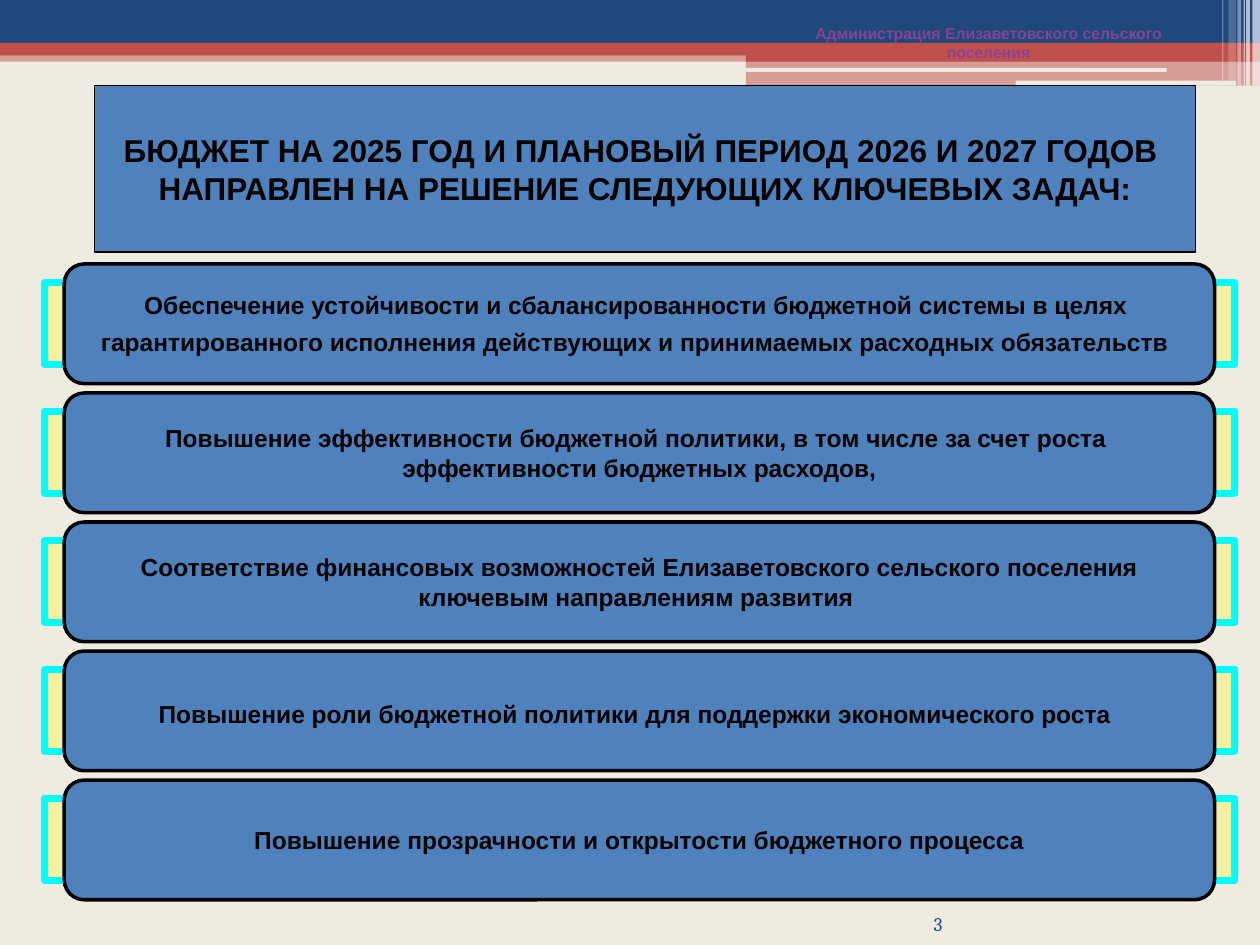
import pptx
import pptx.util
import pptx.dml.color
import pptx.enum.shapes
import pptx.enum.text
import pptx.oxml
import pptx.oxml.ns

SHAPE = pptx.enum.shapes.MSO_SHAPE
ALIGN = pptx.enum.text.PP_ALIGN
ANCHOR = pptx.enum.text.MSO_ANCHOR

NAVY, RED, CREAM, WHITE = "1F497D", "C0504D", "EEECE1", "FFFFFF"
BLUE, CYAN, YELLOW, BLACK, PURPLE = "4F81BD", "00FFFF", "FFFF00", "000000", "874396"


def rgb(value):
    return pptx.dml.color.RGBColor.from_string(value)


class Deck:
    cols, rows = 100, 75
    font = "Arial"

    def __init__(self):
        self.prs = pptx.Presentation()
        self.prs.slide_width = pptx.util.Inches(10)
        self.prs.slide_height = pptx.util.Inches(7.5)
        self.s = self.prs.slides.add_slide(self.prs.slide_layouts[6])

    def background(self, color):
        fill = self.s.background.fill
        fill.solid()
        fill.fore_color.rgb = rgb(color)

    def place(self, x, y, w, h):
        col = self.prs.slide_width / self.cols
        row = self.prs.slide_height / self.rows
        return [round(v) for v in (x * col, y * row, w * col, h * row)]

    def box(self, x, y, w, h, color, opacity=100, line=None, width=1, kind=SHAPE.RECTANGLE):
        sp = self.s.shapes.add_shape(kind, *self.place(x, y, w, h))
        sp.shadow.inherit = False
        sp.fill.solid()
        sp.fill.fore_color.rgb = rgb(color)
        if opacity < 100:
            clr = sp.element.spPr.find(".//" + pptx.oxml.ns.qn("a:srgbClr"))
            alpha = pptx.oxml.parse_xml(f'<a:alpha {pptx.oxml.ns.nsdecls("a")} val="{opacity * 1000}"/>')
            clr.append(alpha)
        if line:
            sp.line.color.rgb = rgb(line)
            sp.line.width = pptx.util.Pt(width)
        else:
            sp.line.fill.background()
        return sp

    def put_text(self, sp, lines, size, color=BLACK, bold=True, font=font, align=ALIGN.CENTER,
                 anchor=ANCHOR.MIDDLE, wrap=False, tail=None):
        tf = sp.text_frame
        tf.word_wrap = wrap
        tf.vertical_anchor = anchor
        for i, line in enumerate(lines):
            p = tf.add_paragraph() if i else tf.paragraphs[0]
            p.alignment = align
            p.font.name, p.font.size, p.font.bold = font, pptx.util.Pt(size), bold
            p.font.color.rgb = rgb(color)
            p.add_run().text = line
        if tail:
            r = p.add_run()
            r.text = " "
            r.font.size, r.font.bold = pptx.util.Pt(tail), False

    def label(self, x, y, w, h, text, size, color, margin=None, **style):
        sp = self.s.shapes.add_textbox(*self.place(x, y, w, h))
        if margin is not None:
            tf = sp.text_frame
            tf.margin_left = tf.margin_right = tf.margin_top = tf.margin_bottom = margin
        self.put_text(sp, [text], size, color, wrap=True, **style)

    def task(self, y, lines, tail):
        self.box(3.5, y + 1.45, 94.5, 6.5, YELLOW, 28, CYAN, 4)
        sp = self.box(5.1, y, 91.3, 9.5, BLUE, line=BLACK, width=2, kind=SHAPE.ROUNDED_RECTANGLE)
        self.put_text(sp, lines, 14, tail=tail)


BANDS = [
    (0, 4, 100, 0.9, RED, 50),
    (0, 0, 100, 3.4, NAVY, 100),
    (0, 3.4, 100, 1, RED, 100),
    (59.2, 3.9, 40.8, 1, RED, 100),
    (59.2, 4.8, 40.8, 2, RED, 50),
]
BARS = [(59.1, 5.4, 33.5, 0.3), (80.6, 6.4, 17.5, 0.4)]
STRIPES = [
    (99.4, 0.6, 6.8, 65),
    (98.9, 0.3, 6.8, 65),
    (98.7, 0.1, 6.8, 60),
    (98.2, 0.3, 6.8, 40),
    (97.5, 0.6, 6.4, 20),
    (97, 0.1, 6.4, 30),
]
TITLE = [
    "БЮДЖЕТ НА 2025 ГОД И ПЛАНОВЫЙ ПЕРИОД 2026 И 2027 ГОДОВ ",
    "НАПРАВЛЕН НА РЕШЕНИЕ СЛЕДУЮЩИХ КЛЮЧЕВЫХ ЗАДАЧ:",
]
TASKS = [
    (["Обеспечение устойчивости и сбалансированности бюджетной системы в целях ",
      "гарантированного исполнения действующих и принимаемых расходных обязательств"], 18),
    (["Повышение эффективности бюджетной политики, в том числе за счет роста ",
      "эффективности бюджетных расходов,"], None),
    (["Соответствие финансовых возможностей Елизаветовского сельского поселения",
      "ключевым направлениям развития "], None),
    (["Повышение роли бюджетной политики для поддержки экономического роста"], 18),
    (["Повышение прозрачности и открытости бюджетного процесса"], None),
]


def main():
    deck = Deck()
    deck.background(CREAM)
    for band in BANDS:
        deck.box(*band)
    for bar in BARS:
        deck.box(*bar, CREAM, kind=SHAPE.ROUNDED_RECTANGLE)
    for x, w, h, opacity in STRIPES:
        deck.box(x, 0, w, h, WHITE, opacity)
    deck.label(62.9, 1.4, 31.1, 4, "Администрация Елизаветовского сельского поселения", 9, PURPLE,
               anchor=ANCHOR.TOP)
    deck.label(68.4, 71.7, 6.4, 2.5, "3", 11, NAVY, margin=0, bold=False, font="Cambria",
               align=ALIGN.RIGHT, anchor=ANCHOR.BOTTOM)
    deck.put_text(deck.box(7.5, 6.8, 87.4, 13.2, BLUE, line=BLACK, width=0.75), TITLE, 18)
    top, pitch = 20.95, 10.24
    for i, (lines, tail) in enumerate(TASKS):
        deck.task(top + i * pitch, lines, tail)
    deck.prs.save("out.pptx")


if __name__ == "__main__":
    main()
